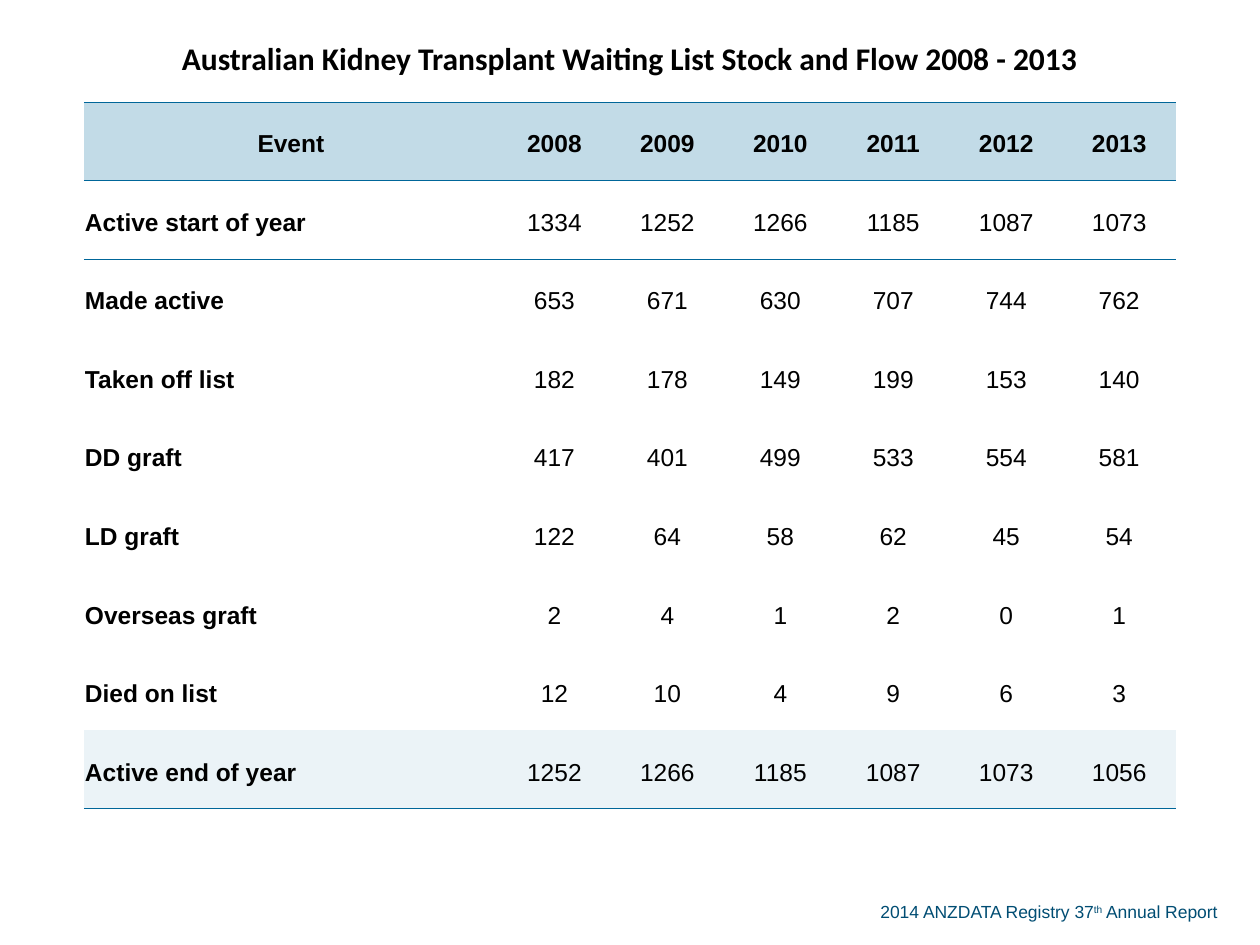
"""Build the kidney transplant waiting list slide with its stock and flow table."""
from lxml import etree
from pptx import Presentation
from pptx.dml.color import RGBColor
from pptx.enum.text import MSO_ANCHOR, MSO_AUTO_SIZE, PP_ALIGN
from pptx.oxml.ns import qn
from pptx.util import Emu, Pt

MIDDLE = MSO_ANCHOR.MIDDLE
GROW = MSO_AUTO_SIZE.SHAPE_TO_FIT_TEXT
LEFT, CENTER = PP_ALIGN.LEFT, PP_ALIGN.CENTER
PLAIN_TABLE_STYLE = "{2D5ABB26-0587-4C30-8999-92F81FD0307C}"
SCALE = 914400 / 126
THEME = {
    "title_font": "Calibri", "body_font": "Arial",
    "title_size": 18, "body_size": 14, "footer_size": 10, "rule_width": 0.5,
    "text": "000000", "footer": "004D73", "rule": "006699",
    "header_fill": "C2DBE7", "total_fill": "EBF3F7",
}
TITLE = "Australian Kidney Transplant Waiting List Stock and Flow 2008 - 2013"
ROWS = [
    ("Event", 2008, 2009, 2010, 2011, 2012, 2013),
    ("Active start of year", 1334, 1252, 1266, 1185, 1087, 1073),
    ("Made active", 653, 671, 630, 707, 744, 762),
    ("Taken off list", 182, 178, 149, 199, 153, 140),
    ("DD graft", 417, 401, 499, 533, 554, 581),
    ("LD graft", 122, 64, 58, 62, 45, 54),
    ("Overseas graft", 2, 4, 1, 2, 0, 1),
    ("Died on list", 12, 10, 4, 9, 6, 3),
    ("Active end of year", 1252, 1266, 1185, 1087, 1073, 1056),
]
FOOTER = [("2014 ANZDATA Registry 37", 0), ("th", 30000), (" Annual Report", 0)]


def px(length):
    return Emu(round(length * SCALE))


def apply_format(target, values):
    for name, value in values.items():
        setattr(target, name, value)


presentation = Presentation()
apply_format(presentation, {"slide_width": px(1260), "slide_height": px(945)})
slide = presentation.slides.add_slide(presentation.slide_layouts[6])

footer_box = slide.shapes.add_textbox(px(868), px(895), px(377), px(34))
apply_format(footer_box.text_frame, {"word_wrap": True, "auto_size": GROW})
footer_paragraph = footer_box.text_frame.paragraphs[0]
for text, baseline in FOOTER:
    run = footer_paragraph.add_run()
    run.text = text
    apply_format(run.font, {"name": THEME["body_font"], "size": Pt(THEME["footer_size"])})
    run.font.color.rgb = RGBColor.from_string(THEME["footer"])
    if baseline:
        run.font._element.set("baseline", str(baseline))

table_rows = [(TITLE,) + ("",) * 6] + ROWS
last = len(table_rows) - 1
frame = slide.shapes.add_table(len(table_rows), 7, px(84), px(16), px(1092), px(793))
table = frame.table
apply_format(table, {"first_row": False, "horz_banding": False})
table._tbl.tblPr.find(qn("a:tableStyleId")).text = PLAIN_TABLE_STYLE
for index, column in enumerate(table.columns):
    column.width = px(113 if index else 414)
for index, row in enumerate(table.rows):
    row.height = px(707 / last if index else 86)
table.cell(0, 0).merge(table.cell(0, 6))

fills = {1: THEME["header_fill"], last: THEME["total_fill"]}
rules = {0: ["a:lnB"], 1: ["a:lnT", "a:lnB"], 2: ["a:lnT"], last: ["a:lnB"]}
for row_index, values in enumerate(table_rows):
    is_title = row_index == 0
    for column_index, value in enumerate(values):
        cell = table.cell(row_index, column_index)
        apply_format(cell, {
            "vertical_anchor": MIDDLE, "margin_left": px(1), "margin_right": px(1),
            "margin_top": px(1), "margin_bottom": px(0),
        })
        for side in rules.get(row_index, []):
            line = etree.SubElement(cell._tc.tcPr, qn(side), w=str(Pt(THEME["rule_width"])))
            solid = etree.SubElement(line, qn("a:solidFill"))
            etree.SubElement(solid, qn("a:srgbClr"), val=THEME["rule"])
        if row_index in fills:
            cell.fill.solid()
            cell.fill.fore_color.rgb = RGBColor.from_string(fills[row_index])
        else:
            cell.fill.background()
        if value == "":
            continue
        paragraph = cell.text_frame.paragraphs[0]
        paragraph.alignment = LEFT if column_index == 0 and row_index > 1 else CENTER
        if not is_title:
            apply_format(paragraph, {"line_spacing": 1.19, "space_after": Pt(14)})
        run = paragraph.add_run()
        run.text = str(value)
        apply_format(run.font, {
            "name": THEME["title_font" if is_title else "body_font"],
            "size": Pt(THEME["title_size" if is_title else "body_size"]),
            "bold": row_index < 2 or column_index == 0,
        })
        run.font.color.rgb = RGBColor.from_string(THEME["text"])

presentation.save("out.pptx")
